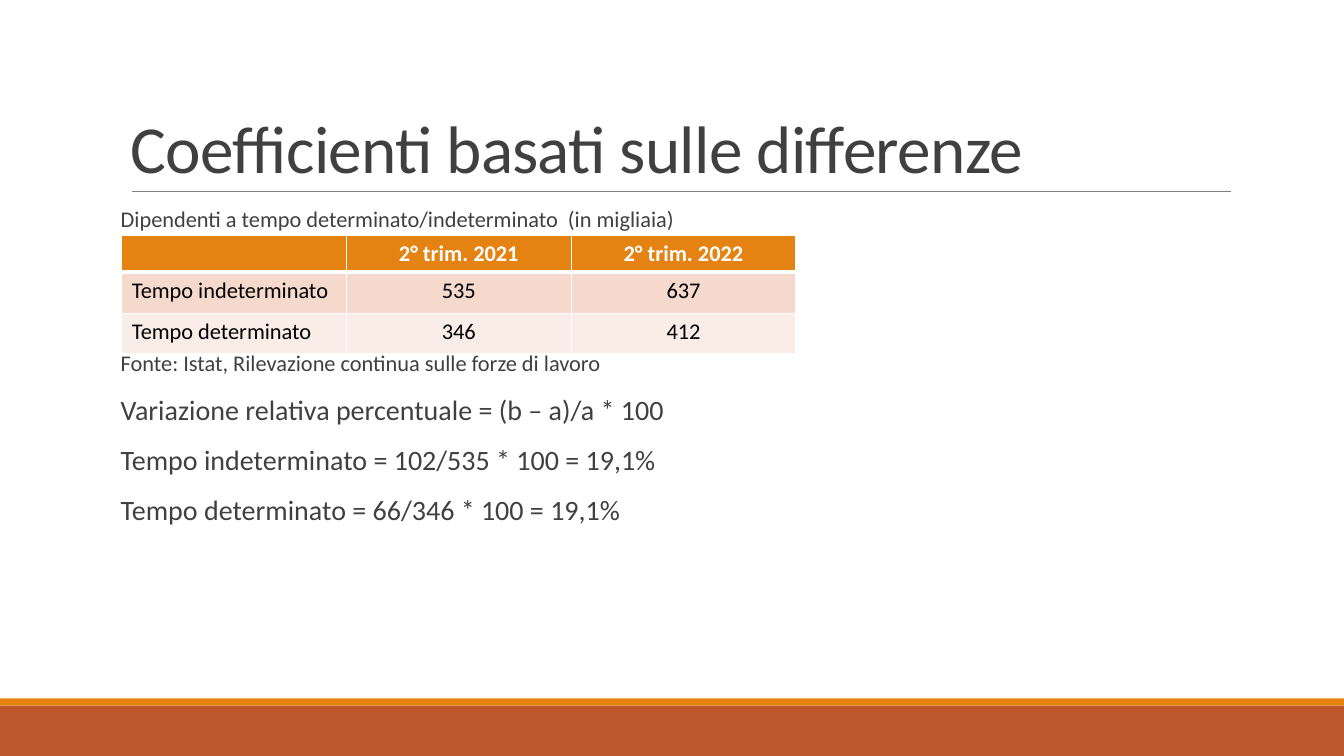
from lxml import etree
from pptx import Presentation
from pptx.dml.color import RGBColor
from pptx.enum.shapes import MSO_CONNECTOR, MSO_SHAPE
from pptx.enum.text import MSO_ANCHOR, PP_ALIGN
from pptx.oxml.ns import qn
from pptx.util import Pt

PX = 9525
LEFT, CENTER = PP_ALIGN.LEFT, PP_ALIGN.CENTER
BOTTOM = MSO_ANCHOR.BOTTOM
RECT, LINE = MSO_SHAPE.RECTANGLE, MSO_CONNECTOR.STRAIGHT

WHITE = RGBColor(0xFF, 0xFF, 0xFF)
BLACK = RGBColor(0, 0, 0)
INK = RGBColor(0x40, 0x40, 0x40)
GRAY = RGBColor(0x80, 0x80, 0x80)
ORANGE = RGBColor(0xE4, 0x83, 0x12)
RUST = RGBColor(0xBD, 0x58, 0x2C)
PEACH = RGBColor(0xF5, 0xD9, 0xCC)
BLUSH = RGBColor(0xFA, 0xED, 0xE7)

TITLE = "Coefficienti basati sulle differenze"
CAPTION = [("Dipendenti a tempo determinato/indeterminato  (in migliaia)", 16)]
NOTES = [
    ("Fonte: Istat, Rilevazione continua sulle forze di lavoro", 16),
    ("Variazione relativa percentuale = (b – a)/a * 100", 20),
    ("Tempo indeterminato = 102/535 * 100 = 19,1%", 20),
    ("Tempo determinato = 66/346 * 100 = 19,1%", 20),
]
ROWS = [
    ("", "2° trim. 2021", "2° trim. 2022"),
    ("Tempo indeterminato", "535", "637"),
    ("Tempo determinato", "346", "412"),
]
FILLS = [ORANGE, PEACH, BLUSH]
HEIGHTS = [35, 39, 39]


def emu(*sizes):
    return [size * PX for size in sizes]


def style(target, **values):
    for name, value in values.items():
        setattr(target, name, value)


def write(para, text, size, color, bold=False):
    run = para.add_run()
    run.text = text
    style(run.font, name="Calibri", size=Pt(size), bold=bold)
    run.font.color.rgb = color
    return run


def add_band(slide, box, color):
    band = slide.shapes.add_shape(RECT, *emu(*box))
    band.shadow.inherit = False
    band.fill.solid()
    band.fill.fore_color.rgb = color
    band.line.fill.background()


def add_title(slide, box):
    """Fill the title placeholder and rule a line along its foot."""
    x, y, w, h = box
    title = slide.shapes.title
    style(title, **dict(zip(("left", "top", "width", "height"), emu(*box))))
    style(title.text_frame, vertical_anchor=BOTTOM, word_wrap=True)
    para = title.text_frame.paragraphs[0]
    style(para, alignment=LEFT, line_spacing=0.85)
    run = write(para, TITLE, 48, INK)
    run._r.get_or_add_rPr().set("spc", "-50")

    foot = y + h - 1
    rule = slide.shapes.add_connector(LINE, *emu(x + 11, foot, x + w + 1, foot))
    rule.line.color.rgb = GRAY
    rule.line.width = Pt(0.5)
    etree.SubElement(rule._element.spPr, qn("a:effectLst"))


def add_text(slide, box, lines):
    frame = slide.shapes.add_textbox(*emu(*box)).text_frame
    style(frame, word_wrap=True, margin_left=0, margin_right=0)
    for i, (text, size) in enumerate(lines):
        para = frame.paragraphs[0] if i == 0 else frame.add_paragraph()
        style(para, line_spacing=0.9, space_before=Pt(12 if i else 0),
              space_after=Pt(2))
        write(para, text, size, INK)


def add_edges(cell, top, bottom):
    """Draw white cell borders, with top and bottom widths in points."""
    props = cell._tc.get_or_add_tcPr()
    edges = {"a:lnL": 1, "a:lnR": 1, "a:lnT": top, "a:lnB": bottom}
    for i, (tag, width) in enumerate(edges.items()):
        edge = etree.Element(qn(tag), w=str(Pt(width)))
        fill = etree.SubElement(edge, qn("a:solidFill"))
        etree.SubElement(fill, qn("a:srgbClr"), val=str(WHITE))
        props.insert(i, edge)


def add_grid(slide, box):
    count = len(ROWS[0])
    table = slide.shapes.add_table(len(ROWS), count, *emu(*box)).table
    for col in table.columns:
        col.width = box[2] * PX // count
    for r, texts in enumerate(ROWS):
        table.rows[r].height = HEIGHTS[r] * PX
        for c, text in enumerate(texts):
            cell = table.cell(r, c)
            cell.fill.solid()
            cell.fill.fore_color.rgb = FILLS[r]
            add_edges(cell, 3 if r == 1 else 1, 1 if r else 3)
            para = cell.text_frame.paragraphs[0]
            para.alignment = CENTER if c else LEFT
            if text:
                write(para, text, 16, BLACK if r else WHITE, r == 0)
            else:
                para.font.size = Pt(16)


def add_body(slide, box):
    """Stack the caption, the table and the notes down the box."""
    x, y, w, h = box
    add_text(slide, (x, y, w, 30), CAPTION)
    add_grid(slide, (x + 1, y + 30, 642, sum(HEIGHTS)))
    add_text(slide, (x, y + 137, w, h - 137), NOTES)


def main():
    deck = Presentation()
    deck.slide_width, deck.slide_height = emu(1280, 720)
    slide = deck.slides.add_slide(deck.slide_layouts[5])
    add_band(slide, (0, 672, 1280, 48), RUST)
    add_band(slide, (0, 665, 1280, 7), ORANGE)
    add_title(slide, (115, 30, 1056, 153))
    add_body(slide, (115, 194, 1056, 422))
    deck.save("out.pptx")


if __name__ == "__main__":
    main()
